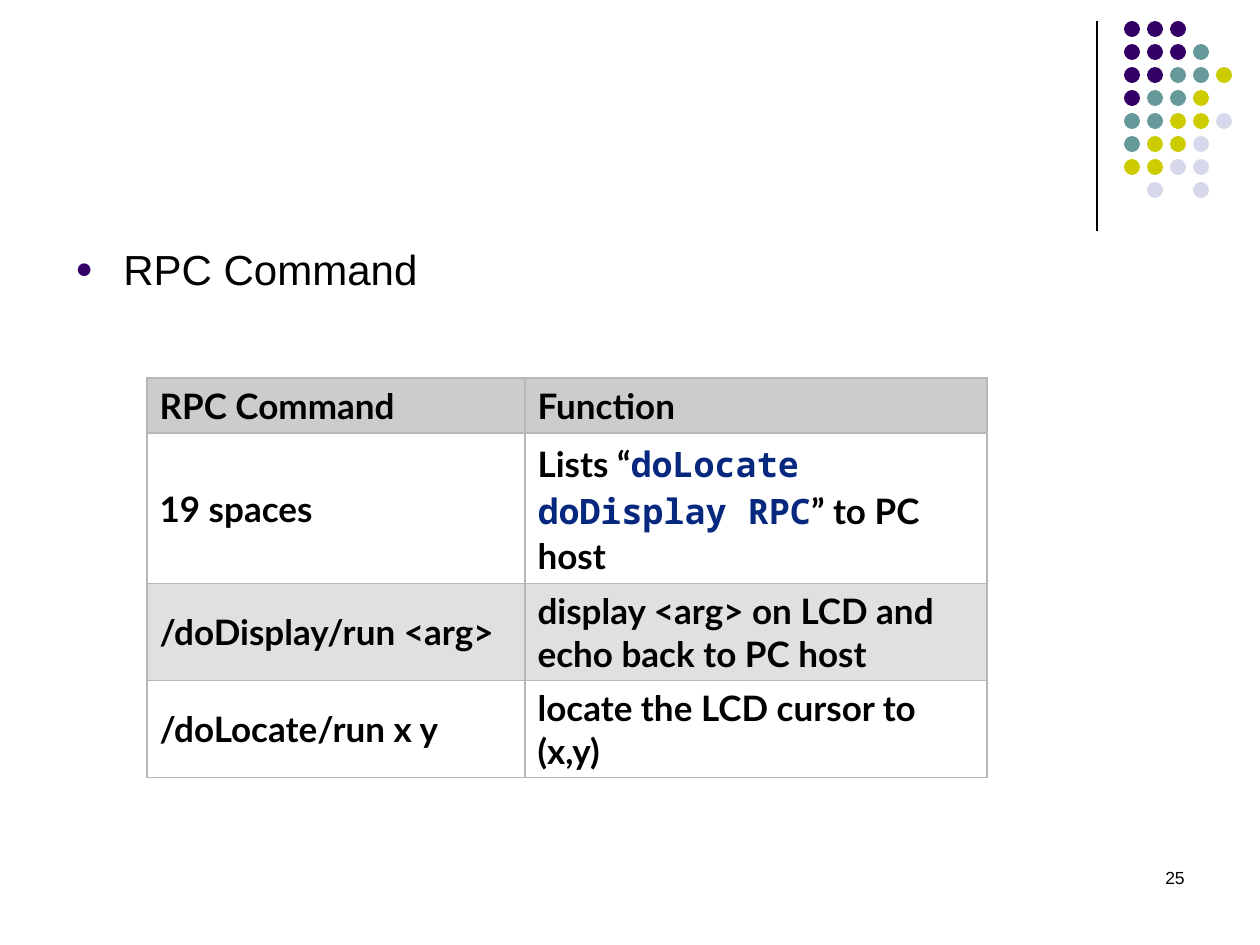
from dataclasses import dataclass

from lxml.etree import SubElement as Sub
from pptx import Presentation
from pptx.dml.color import RGBColor as Rgb
from pptx.enum.shapes import MSO_CONNECTOR as Link, MSO_SHAPE as Form
from pptx.enum.text import MSO_ANCHOR as Anchor, PP_ALIGN as Align
from pptx.oxml.ns import qn
from pptx.util import Emu, Pt

SCALE = 914400 / 126
INK = {
    "black": "000000", "white": "FFFFFF", "navy": "06287E",
    "head": "CCCCCC", "band": "E0E0E0", "edge": "B7B7B7",
    "P": "330066", "T": "669999", "Y": "CCCC00", "L": "D8D8EC",
}
STYLE = {
    "body": {"size": Pt(24), "name": "Arial"},
    "page": {"size": Pt(10), "name": "Arial"},
    "cell": {"size": Pt(20), "name": "Lato", "bold": True},
    "code": {"size": Pt(20), "name": "Noto Sans Mono", "bold": True},
}
DOTS = ("PPP", "PPPT", "PPTTY", "PTTY", "TTYYL", "TYYL", "YYLL", " L L")


@dataclass
class Run:
    text: str
    style: str = "cell"
    ink: str = "black"


@dataclass
class Row:
    high: int
    fill: str
    left: list[Run]
    right: list[Run]


ROWS = [
    Row(55, "head", [Run("RPC Command")], [Run("Function")]),
    Row(151, "white", [Run("19 spaces")],
        [Run("Lists “"), Run("doLocate doDisplay RPC", "code", "navy"),
         Run("” to PC host")]),
    Row(97, "band", [Run("/doDisplay/run <arg>")],
        [Run("display <arg> on LCD and echo back to PC host")]),
    Row(97, "white", [Run("/doLocate/run x y")],
        [Run("locate the LCD cursor to (x,y)")]),
]


def px(n: int) -> Emu:
    return Emu(round(n * SCALE))


def tint(key: str) -> Rgb:
    return Rgb.from_string(INK[key])


def write(para, runs: list[Run]) -> None:
    for item in runs:
        run = para.add_run()
        run.text = item.text
        for name, value in STYLE[item.style].items():
            setattr(run.font, name, value)
        run.font.color.rgb = tint(item.ink)


def label(slide, box: tuple[int, ...], run: Run):
    frame = slide.shapes.add_textbox(*map(px, box)).text_frame
    frame.word_wrap = True
    para = frame.paragraphs[0]
    write(para, [run])
    return para


def bullet(para) -> None:
    props = para._p.get_or_add_pPr()
    props.set("marL", str(px(48)))
    props.set("indent", str(px(-48)))
    Sub(Sub(props, qn("a:spcBef")), qn("a:spcPct"), val="20000")
    Sub(Sub(props, qn("a:buClr")), qn("a:srgbClr"), val=INK["P"])
    Sub(props, qn("a:buSzPct"), val="70000")
    Sub(props, qn("a:buFont"), typeface="Arial")
    Sub(props, qn("a:buChar"), char="●")


def rule(slide) -> None:
    line = slide.shapes.add_connector(
        Link.STRAIGHT, px(1097), px(21), px(1097), px(231))
    line.line.color.rgb = tint("black")
    line.line.width = Pt(0.75)
    Sub(line._element.spPr, qn("a:effectLst"))


def dots(slide) -> None:
    group = slide.shapes.add_group_shape()
    for r, row in enumerate(DOTS):
        for c, key in enumerate(row):
            if key == " ":
                continue
            dot = group.shapes.add_shape(
                Form.OVAL, px(1124 + 23 * c), px(21 + 23 * r), px(16), px(16))
            dot.shadow.inherit = False
            dot.fill.solid()
            dot.fill.fore_color.rgb = tint(key)
            dot.line.fill.background()


def border(cell) -> None:
    props = cell._tc.get_or_add_tcPr()
    for n, side in enumerate(("lnL", "lnR", "lnT", "lnB")):
        edge = Sub(props, qn(f"a:{side}"), w=str(Pt(0.75)))
        Sub(Sub(edge, qn("a:solidFill")), qn("a:srgbClr"), val=INK["edge"])
        props.insert(n, edge)


def grid(slide) -> None:
    high = sum(row.high for row in ROWS)
    table = slide.shapes.add_table(
        len(ROWS), 2, px(147), px(378), px(840), px(high)).table
    for col, wide in zip(table.columns, (378, 462)):
        col.width = px(wide)
    for r, row in enumerate(ROWS):
        table.rows[r].height = px(row.high)
        for c, runs in enumerate((row.left, row.right)):
            cell = table.cell(r, c)
            cell.fill.solid()
            cell.fill.fore_color.rgb = tint(row.fill)
            cell.vertical_anchor = Anchor.MIDDLE
            write(cell.text_frame.paragraphs[0], runs)
            border(cell)


def main() -> None:
    deck = Presentation()
    deck.slide_width, deck.slide_height = px(1260), px(945)
    slide = deck.slides.add_slide(deck.slide_layouts[6])
    rule(slide)
    dots(slide)
    bullet(label(slide, (63, 237, 1134, 78), Run("RPC Command", "body")))
    page = label(slide, (903, 861, 294, 63), Run("25", "page"))
    page.alignment = Align.RIGHT
    grid(slide)
    deck.save("out.pptx")


if __name__ == "__main__":
    main()
